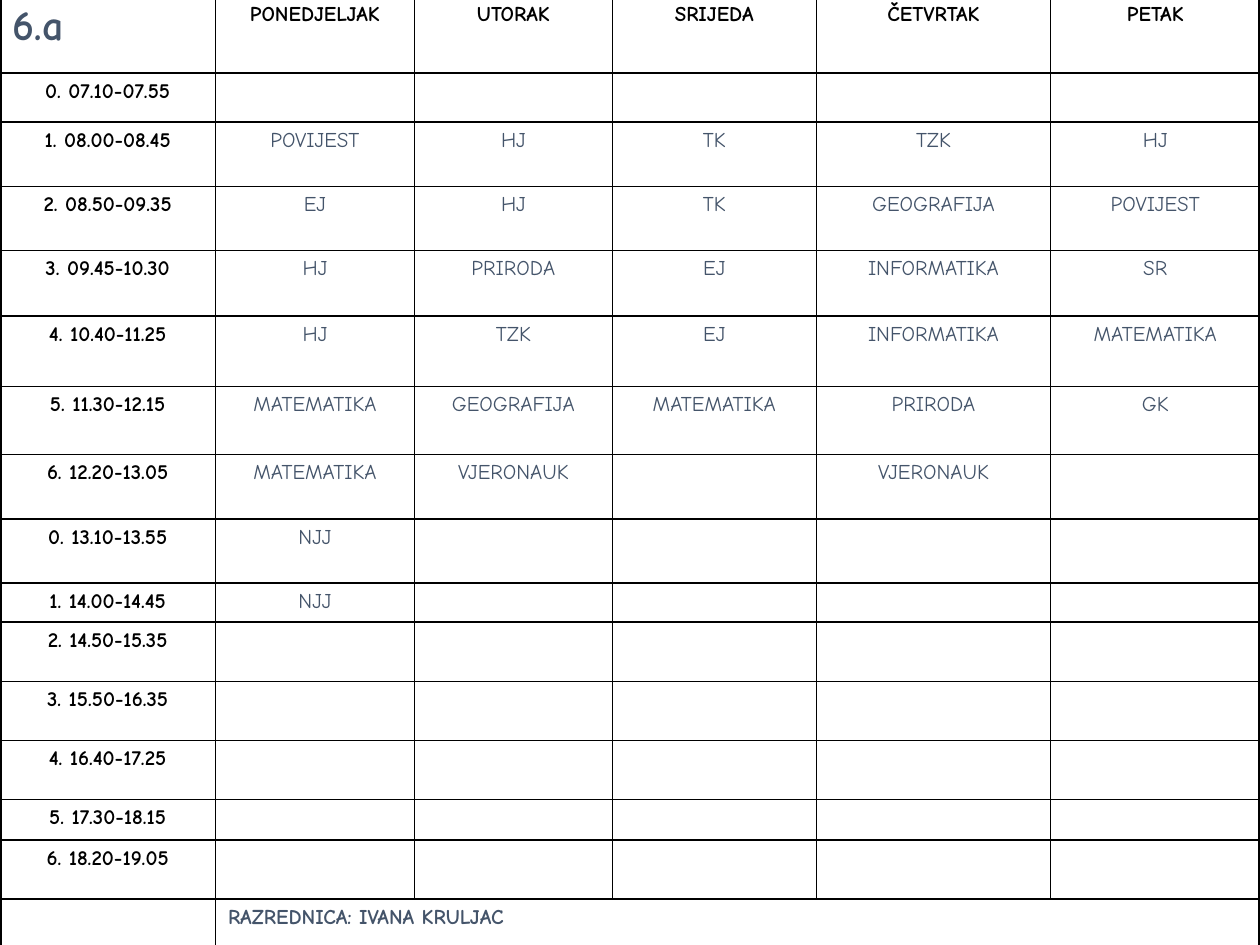
from lxml import etree
from pptx import Presentation
from pptx import util as u
from pptx.dml.color import RGBColor
from pptx.enum import text
from pptx.oxml import ns

COLORS = {"ink": "000000", "slate": "44546A"}
FONT = "Comic Neue"
THIN, THICK = 1, 2.25

COLUMN_WIDTHS = [1.71, 1.58, 1.57, 1.62, 1.86, 1.66]
ROW_HEIGHTS = [0.61, 0.39, 0.51, 0.51, 0.52, 0.56, 0.54, 0.51,
               0.51, 0.31, 0.47, 0.47, 0.47, 0.32, 0.47, 0.39]

CLASS_NAME = "6.a"
TEACHER = "RAZREDNICA: IVANA KRULJAC"
DAYS = ["PONEDJELJAK", "UTORAK", "SRIJEDA", "ČETVRTAK", "PETAK"]
LESSONS = [
    ("0. 07.10-07.55", []),
    ("1. 08.00-08.45", ["POVIJEST", "HJ", "TK", "TZK", "HJ"]),
    ("2. 08.50-09.35", ["EJ", "HJ", "TK", "GEOGRAFIJA", "POVIJEST"]),
    ("3. 09.45-10.30", ["HJ", "PRIRODA", "EJ", "INFORMATIKA", "SR"]),
    ("4. 10.40-11.25", ["HJ", "TZK", "EJ", "INFORMATIKA", "MATEMATIKA"]),
    ("5. 11.30-12.15", ["MATEMATIKA", "GEOGRAFIJA", "MATEMATIKA", "PRIRODA", "GK"]),
    ("6. 12.20-13.05", ["MATEMATIKA", "VJERONAUK", "", "VJERONAUK", ""]),
    ("0. 13.10-13.55", ["NJJ"]),
    ("1. 14.00-14.45", ["NJJ"]),
    ("2. 14.50-15.35", []),
    ("3. 15.50-16.35", []),
    ("4. 16.40-17.25", []),
    ("5. 17.30-18.15", []),
    ("6. 18.20-19.05", []),
]


def write(cell, words, size=12, color="ink", bold=True, centered=True):
    paragraph = cell.text_frame.paragraphs[0]
    if centered:
        paragraph.alignment = text.PP_ALIGN.CENTER
    if not words:
        # An empty cell still needs a small font, or its row grows
        end = etree.SubElement(paragraph._p, ns.qn("a:endParaRPr"))
        end.set("sz", str(size * 100))
        return
    run = paragraph.add_run()
    run.text = words
    run.font.name = FONT
    run.font.size = u.Pt(size)
    run.font.bold = bold
    run.font.color.rgb = RGBColor.from_string(COLORS[color])


class Timetable:
    def __init__(self, slide):
        self.slide = slide

    def add_grid(self, left, top, widths, heights):
        frame = self.slide.shapes.add_table(
            len(heights), len(widths), u.Inches(left), u.Inches(top),
            u.Inches(sum(widths)), u.Inches(sum(heights)))
        table = frame.table
        table.first_row = table.horz_banding = False
        for column, width in zip(table.columns, widths):
            column.width = u.Inches(width)
        for row, height in zip(table.rows, heights):
            row.height = u.Inches(height)
        return table

    def add_border(self, cell, side, width):
        properties = cell._tc.get_or_add_tcPr()
        line = etree.SubElement(properties, ns.qn("a:ln" + side), w=str(u.Pt(width)))
        fill = etree.SubElement(line, ns.qn("a:solidFill"))
        etree.SubElement(fill, ns.qn("a:srgbClr"), val=COLORS["ink"])

    def frame_cells(self, table):
        last_row, last_column = len(table.rows) - 1, len(table.columns) - 1
        for r in range(last_row + 1):
            for c in range(last_column + 1):
                cell = table.cell(r, c)
                if cell.is_spanned:
                    continue
                right = c + cell.span_width - 1 if cell.is_merge_origin else c
                outer = {"L": c == 0, "R": right == last_column,
                         "T": r == 0, "B": r == last_row}
                for side, is_outer in outer.items():
                    self.add_border(cell, side, THICK if is_outer else THIN)
                cell.fill.background()


def main():
    presentation = Presentation()
    presentation.slide_width, presentation.slide_height = u.Inches(10), u.Inches(7.5)
    timetable = Timetable(presentation.slides.add_slide(presentation.slide_layouts[6]))
    table = timetable.add_grid(0, -0.03, COLUMN_WIDTHS, ROW_HEIGHTS)

    # Class name and days
    write(table.cell(0, 0), CLASS_NAME, size=24, color="slate", centered=False)
    for c, day in enumerate(DAYS, 1):
        write(table.cell(0, c), day)

    # Times and subjects
    for r, (time, subjects) in enumerate(LESSONS, 1):
        write(table.cell(r, 0), time)
        padded = subjects + [""] * (len(DAYS) - len(subjects))
        for c, subject in enumerate(padded, 1):
            write(table.cell(r, c), subject, color="slate", bold=False)

    # Class teacher
    footer = len(ROW_HEIGHTS) - 1
    table.cell(footer, 1).merge(table.cell(footer, len(DAYS)))
    write(table.cell(footer, 0), "")
    write(table.cell(footer, 1), TEACHER, color="slate", centered=False)

    timetable.frame_cells(table)
    presentation.save("out.pptx")


if __name__ == "__main__":
    main()
